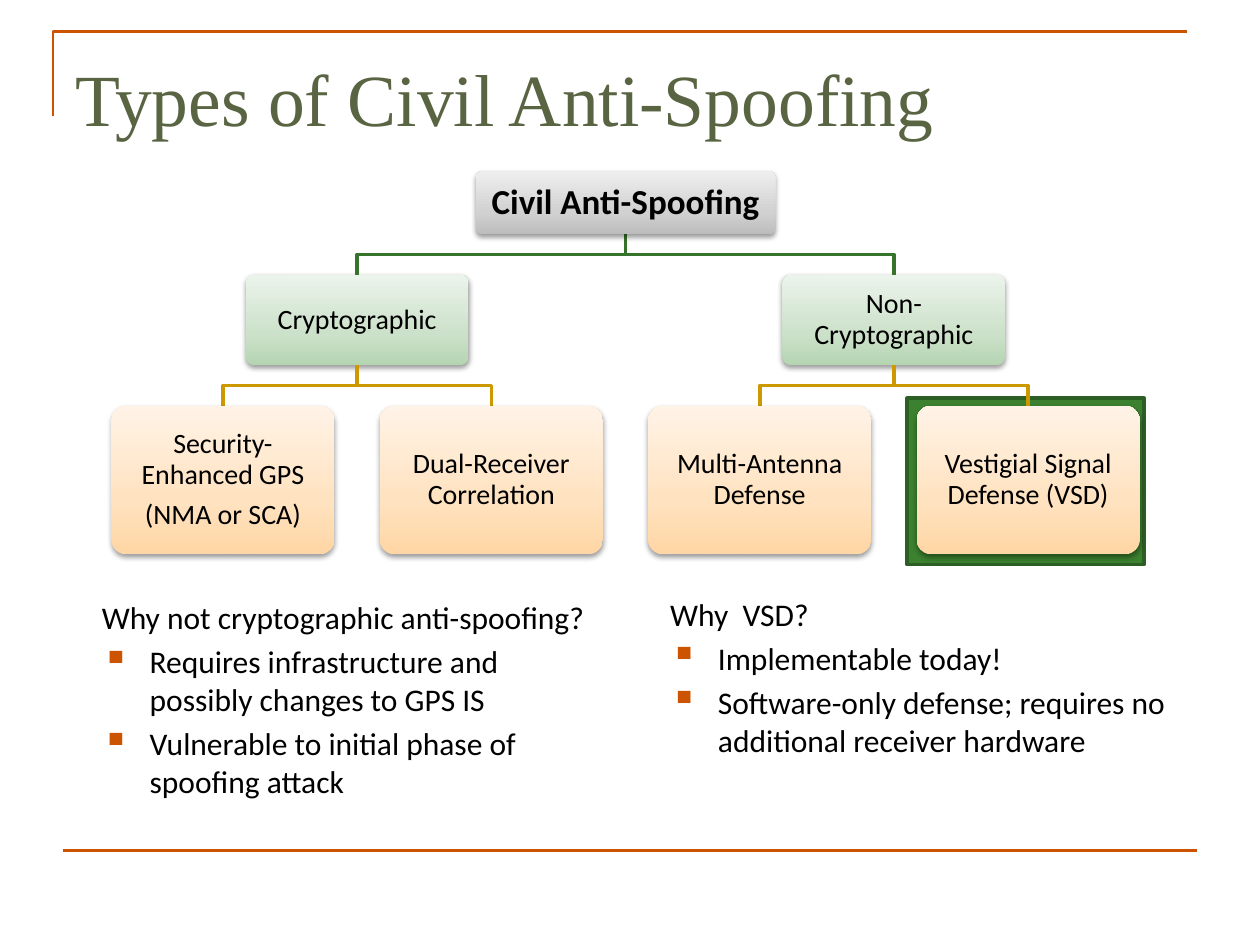
import copy

import pptx
import pptx.dml.color
import pptx.enum.shapes
import pptx.enum.text
import pptx.oxml
import pptx.oxml.ns
import pptx.util
from pptx.util import Inches

TITLE = "Types of Civil Anti-Spoofing"
ROOT = "Civil Anti-Spoofing"
BRANCHES = [
    ("Cryptographic", ["Security-Enhanced GPS\n(NMA or SCA)", "Dual-Receiver Correlation"]),
    ("Non-Cryptographic", ["Multi-Antenna Defense", "Vestigial Signal Defense (VSD)"]),
]
REASONS = [
    (5.22, 4.67, "Why  VSD?", [
        "Implementable today!",
        "Software-only defense; requires no additional receiver hardware",
    ]),
    (0.71, 4.7, "Why not cryptographic anti-spoofing?", [
        "Requires infrastructure and possibly changes to GPS IS",
        "Vulnerable to initial phase of spoofing attack",
    ]),
]
THEME = {
    "title_font": "Times New Roman", "body_font": "Calibri",
    "title": "596442", "text": "000000", "rule": "CC5300",
    "highlight": "3B812F", "highlight_edge": "2C5F23",
    "title_size": 42, "body_size": 18,
}
LEVELS = {
    "root": dict(top=1.36, width=2.38, height=0.5, inset=0.08, size=20, bold=True,
                 shades=["BDBDBD", "D1D1D1", "EEEEEE"], link="35742A"),
    "branch": dict(top=2.18, width=1.77, height=0.72, inset=0.07, size=16, bold=False,
                   shades=["B5D5B2", "CCE1CA", "EBF4EB"], link="CC9900"),
    "leaf": dict(top=3.22, width=1.77, height=1.18, inset=0.07, size=16, bold=False,
                 shades=["FFD6A5", "FFE2BF", "FFF3E7"]),
}
SHADE_POSITIONS = [0, 0.35, 1]
FIRST_LEAF_CENTER, LEAF_PITCH = 1.77, 2.13
NODE_SHADOW = (
    f'<a:outerShdw {pptx.oxml.ns.nsdecls("a")} blurRad="39370" dist="20320" dir="5400000" '
    'rotWithShape="0"><a:srgbClr val="000000"><a:alpha val="38000"/></a:srgbClr></a:outerShdw>'
)


def rgb(value):
    return pptx.dml.color.RGBColor.from_string(value)


def style_line(line, color, width):
    line.color.rgb = rgb(color)
    line.width = pptx.util.Pt(width)


def style_font(paragraph, name, size, color, bold=False):
    for run in paragraph.runs:
        run.font.name = name
        run.font.size = pptx.util.Pt(size)
        run.font.color.rgb = rgb(color)
        run.font.bold = bold


def set_insets(frame, side, top):
    frame.margin_left = frame.margin_right = Inches(side)
    frame.margin_top = frame.margin_bottom = Inches(top)
    frame.word_wrap = True


def add_path(slide, points, color, width):
    start, *rest = [(Inches(x), Inches(y)) for x, y in points]
    builder = slide.shapes.build_freeform(*start)
    builder.add_line_segments(rest, close=False)
    path = builder.convert_to_shape()
    path.fill.background()
    style_line(path.line, color, width)
    path.shadow.inherit = False


def add_frame(slide):
    add_path(slide, [(0.42, 0.92), (0.42, 0.25), (9.42, 0.25)], THEME["rule"], 1.5)
    rule = slide.shapes.add_connector(
        pptx.enum.shapes.MSO_CONNECTOR.STRAIGHT,
        Inches(0.5), Inches(6.75), Inches(9.5), Inches(6.75))
    style_line(rule.line, THEME["rule"], 1.5)
    rule._element.spPr.append(
        pptx.oxml.parse_xml(f'<a:effectLst {pptx.oxml.ns.nsdecls("a")}/>'))


def add_title(slide):
    box = slide.shapes.add_textbox(Inches(0.5), Inches(0.3), Inches(9), Inches(1.25))
    set_insets(box.text_frame, 0.1, 0.12)
    box.text_frame.text = TITLE
    style_font(box.text_frame.paragraphs[0], THEME["title_font"],
               THEME["title_size"], THEME["title"])


def add_highlight(slide):
    highlight = slide.shapes.add_shape(
        pptx.enum.shapes.MSO_SHAPE.RECTANGLE,
        Inches(7.2), Inches(3.16), Inches(1.88), Inches(1.32))
    highlight.fill.solid()
    highlight.fill.fore_color.rgb = rgb(THEME["highlight"])
    style_line(highlight.line, THEME["highlight_edge"], 2)
    highlight.shadow.inherit = False


def fill_gradient(fill, shades):
    fill.gradient()
    fill.gradient_angle = 90
    last_stop = fill.gradient_stops[1]._gs
    last_stop.addnext(copy.deepcopy(last_stop))
    for stop, shade, position in zip(fill.gradient_stops, shades, SHADE_POSITIONS):
        stop.color.rgb = rgb(shade)
        stop.position = position


def add_node(slide, text, center, level):
    node = slide.shapes.add_shape(
        pptx.enum.shapes.MSO_SHAPE.ROUNDED_RECTANGLE,
        Inches(center - level["width"] / 2), Inches(level["top"]),
        Inches(level["width"]), Inches(level["height"]))
    node.adjustments[0] = 0.1
    fill_gradient(node.fill, level["shades"])
    node.line.fill.background()
    node.shadow.inherit = False
    node._element.spPr.find(pptx.oxml.ns.qn("a:effectLst")).append(
        pptx.oxml.parse_xml(NODE_SHADOW))
    frame = node.text_frame
    set_insets(frame, level["inset"], level["inset"])
    frame.vertical_anchor = pptx.enum.text.MSO_ANCHOR.MIDDLE
    frame.text = text
    for paragraph in frame.paragraphs:
        paragraph.alignment = pptx.enum.text.PP_ALIGN.CENTER
        paragraph.line_spacing = 0.9
        paragraph.space_after = pptx.util.Pt(0.35 * level["size"])
        style_font(paragraph, THEME["body_font"], level["size"], THEME["text"], level["bold"])


def add_link(slide, parent_center, child_center, parent, child):
    bottom = parent["top"] + parent["height"]
    middle = (bottom + child["top"]) / 2
    add_path(slide, [(parent_center, bottom), (parent_center, middle),
                     (child_center, middle), (child_center, child["top"])], parent["link"], 2)


def add_tree(slide):
    root, branch, leaf = LEVELS["root"], LEVELS["branch"], LEVELS["leaf"]
    centers = iter(FIRST_LEAF_CENTER + LEAF_PITCH * i
                   for i in range(sum(len(leaves) for _, leaves in BRANCHES)))
    branch_centers = []
    for branch_text, leaves in BRANCHES:
        leaf_centers = [next(centers) for _ in leaves]
        branch_center = sum(leaf_centers) / len(leaf_centers)
        branch_centers.append(branch_center)
        add_node(slide, branch_text, branch_center, branch)
        for leaf_text, leaf_center in zip(leaves, leaf_centers):
            add_link(slide, branch_center, leaf_center, branch, leaf)
            add_node(slide, leaf_text, leaf_center, leaf)
    root_center = sum(branch_centers) / len(branch_centers)
    for branch_center in branch_centers:
        add_link(slide, root_center, branch_center, root, branch)
    add_node(slide, ROOT, root_center, root)


def add_bullet(paragraph):
    properties = paragraph._p.get_or_add_pPr()
    properties.set("marL", str(Inches(0.38)))
    properties.set("indent", str(Inches(-0.38)))
    for tag, inner in [("buClr", f'<a:srgbClr val="{THEME["rule"]}"/>')]:
        properties.append(pptx.oxml.parse_xml(
            f'<a:{tag} {pptx.oxml.ns.nsdecls("a")}>{inner}</a:{tag}>'))
    for tag, attribute in [("buSzPct", 'val="120000"'), ("buChar", 'char="▪"')]:
        properties.append(pptx.oxml.parse_xml(
            f'<a:{tag} {pptx.oxml.ns.nsdecls("a")} {attribute}/>'))


def add_reasons(slide, left, top, question, answers):
    box = slide.shapes.add_textbox(Inches(left), Inches(top), Inches(4.2), Inches(2))
    frame = box.text_frame
    set_insets(frame, 0.1, 0.05)
    frame.text = "\n".join([question, *answers])
    for paragraph in frame.paragraphs[1:]:
        add_bullet(paragraph)
        paragraph.space_before = pptx.util.Pt(0.2 * THEME["body_size"])
    for paragraph in frame.paragraphs:
        style_font(paragraph, THEME["body_font"], THEME["body_size"], THEME["text"])


def main():
    deck = pptx.Presentation()
    deck.slide_width, deck.slide_height = Inches(10), Inches(7.5)
    slide = deck.slides.add_slide(deck.slide_layouts[6])
    add_frame(slide)
    add_highlight(slide)
    add_title(slide)
    add_tree(slide)
    for reasons in REASONS:
        add_reasons(slide, *reasons)
    deck.save("out.pptx")


if __name__ == "__main__":
    main()
